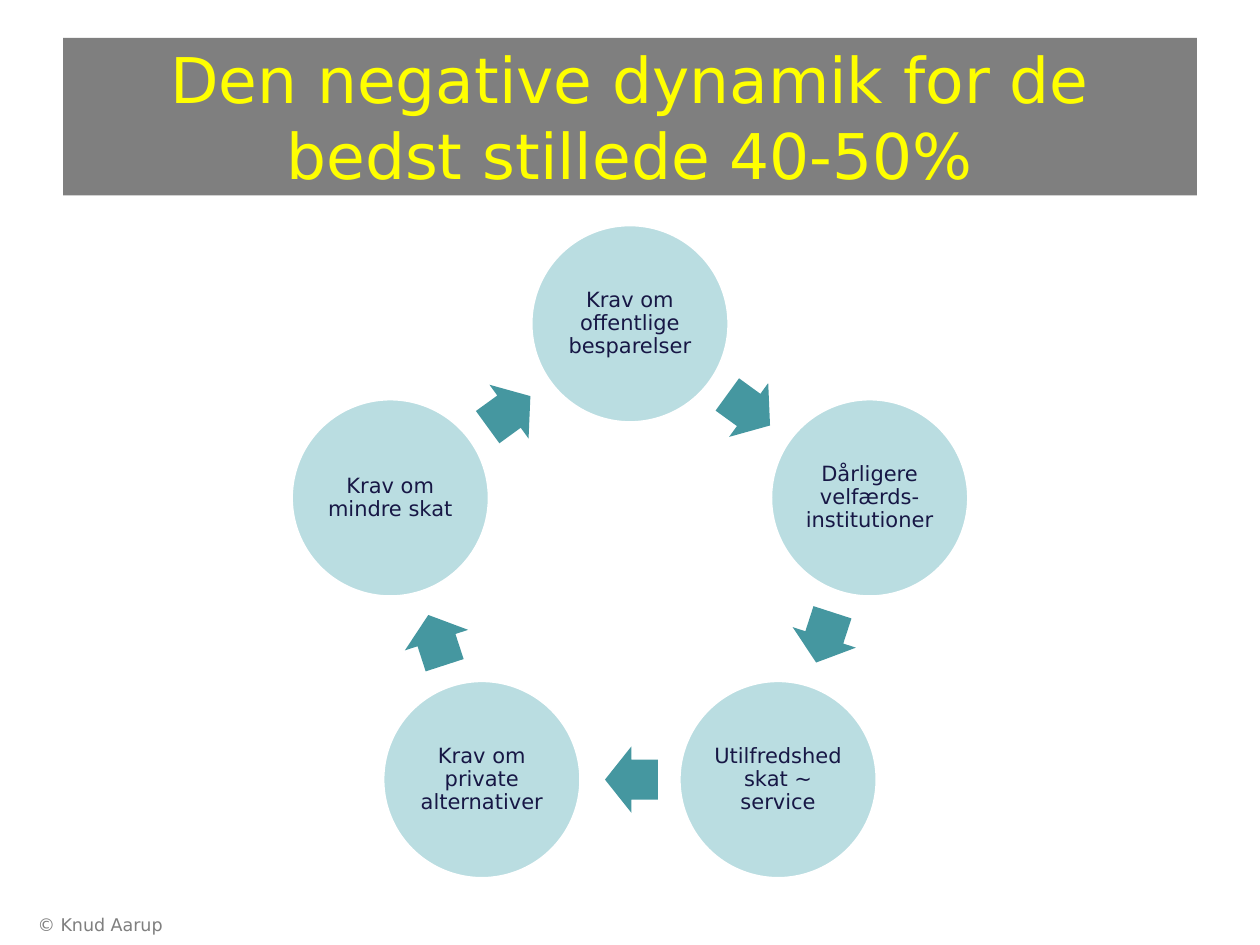
import math
from dataclasses import dataclass

import pptx
import pptx.dml.color
import pptx.enum.shapes
import pptx.enum.text
import pptx.util
from pptx.util import Pt

SHAPE = pptx.enum.shapes.MSO_SHAPE
ALIGN = pptx.enum.text.PP_ALIGN
ANCHOR = pptx.enum.text.MSO_ANCHOR


@dataclass(frozen=True)
class Theme:
    font: str = "DejaVu Sans"
    banner: str = "7F7F7F"
    heading: str = "FFFF00"
    stage: str = "BADDE1"
    outline: str = "FFFFFF"
    stage_text: str = "171745"
    arrow: str = "4597A0"
    credit: str = "7F7F7F"
    heading_size: int = 36
    stage_size: int = 12
    credit_size: int = 10


THEME = Theme()
STAGES = [
    "Krav om offentlige besparelser",
    "Dårligere velfærds-institutioner",
    "Utilfredshed skat ~ service",
    "Krav om private alternativer",
    "Krav om mindre skat",
]
CENTRE_X, CENTRE_Y, RADIUS = 360, 329, 144
STAGE_DIAMETER = 112.3
ARROW_LENGTH, ARROW_WIDTH = 30.2, 38
ARROW_SETBACK = 0.8


def rgb(value):
    return pptx.dml.color.RGBColor.from_string(value)


def fill_solid(shape, color):
    shape.fill.solid()
    shape.fill.fore_color.rgb = rgb(color)


def place(shape, left, top, width, height):
    shape.left, shape.top = Pt(left), Pt(top)
    shape.width, shape.height = Pt(width), Pt(height)


def write(frame, text, size, color, align):
    paragraph = frame.paragraphs[0]
    paragraph.alignment = align
    run = paragraph.add_run()
    run.text = text
    run.font.name = THEME.font
    run.font.size = Pt(size)
    run.font.color.rgb = rgb(color)
    return paragraph


def add_heading(slide, text):
    heading = slide.shapes.title
    place(heading, 36, 21.6, 648, 90)
    fill_solid(heading, THEME.banner)
    frame = heading.text_frame
    frame.auto_size = pptx.enum.text.MSO_AUTO_SIZE.NONE
    frame.vertical_anchor = ANCHOR.MIDDLE
    write(frame, text, THEME.heading_size, THEME.heading, ALIGN.CENTER)


def add_credit(slide, text):
    credit = slide.shapes.add_textbox(Pt(14.4), Pt(519), Pt(168), Pt(21))
    credit.text_frame.word_wrap = True
    write(credit.text_frame, text, THEME.credit_size, THEME.credit, ALIGN.LEFT)


def add_centred(shapes, kind, x, y, width, height, color):
    """Add a flat preset shape around its middle point."""
    shape = shapes.add_shape(kind, Pt(x - width / 2), Pt(y - height / 2),
                             Pt(width), Pt(height))
    shape.shadow.inherit = False
    fill_solid(shape, color)
    return shape


def add_stage(shapes, x, y, text):
    stage = add_centred(shapes, SHAPE.OVAL, x, y,
                        STAGE_DIAMETER, STAGE_DIAMETER, THEME.stage)
    stage.line.color.rgb = rgb(THEME.outline)
    stage.line.width = Pt(1)
    frame = stage.text_frame
    frame.word_wrap = True
    frame.vertical_anchor = ANCHOR.MIDDLE
    frame.margin_left = frame.margin_right = Pt(1.4)
    frame.margin_top = frame.margin_bottom = Pt(1.4)
    paragraph = write(frame, text, THEME.stage_size, THEME.stage_text, ALIGN.CENTER)
    paragraph.line_spacing = 0.9


def add_arrow(shapes, start, end):
    """Add a block arrow midway between two stages, pointing at the second."""
    heading = math.atan2(end[1] - start[1], end[0] - start[0])
    x = (start[0] + end[0]) / 2 - ARROW_SETBACK * math.cos(heading)
    y = (start[1] + end[1]) / 2 - ARROW_SETBACK * math.sin(heading)
    arrow = add_centred(shapes, SHAPE.RIGHT_ARROW, x, y,
                        ARROW_LENGTH, ARROW_WIDTH, THEME.arrow)
    arrow.line.fill.background()
    arrow.adjustments[0] = 0.6
    arrow.adjustments[1] = 0.5
    arrow.rotation = round(math.degrees(heading)) % 360


def add_cycle(slide, stages):
    """Spread the stages clockwise from the top, with an arrow after each."""
    shapes = slide.shapes.add_group_shape().shapes
    angles = [math.tau * i / len(stages) for i in range(len(stages))]
    centres = [(CENTRE_X + RADIUS * math.sin(a), CENTRE_Y - RADIUS * math.cos(a))
               for a in angles]
    for text, centre, following in zip(stages, centres, centres[1:] + centres[:1]):
        add_stage(shapes, *centre, text)
        add_arrow(shapes, centre, following)


def main():
    deck = pptx.Presentation()
    deck.slide_width, deck.slide_height = Pt(720), Pt(540)
    slide = deck.slides.add_slide(deck.slide_layouts[5])
    add_heading(slide, "Den negative dynamik for de bedst stillede 40-50%")
    add_credit(slide, "© Knud Aarup")
    add_cycle(slide, STAGES)
    deck.save("out.pptx")


if __name__ == "__main__":
    main()
